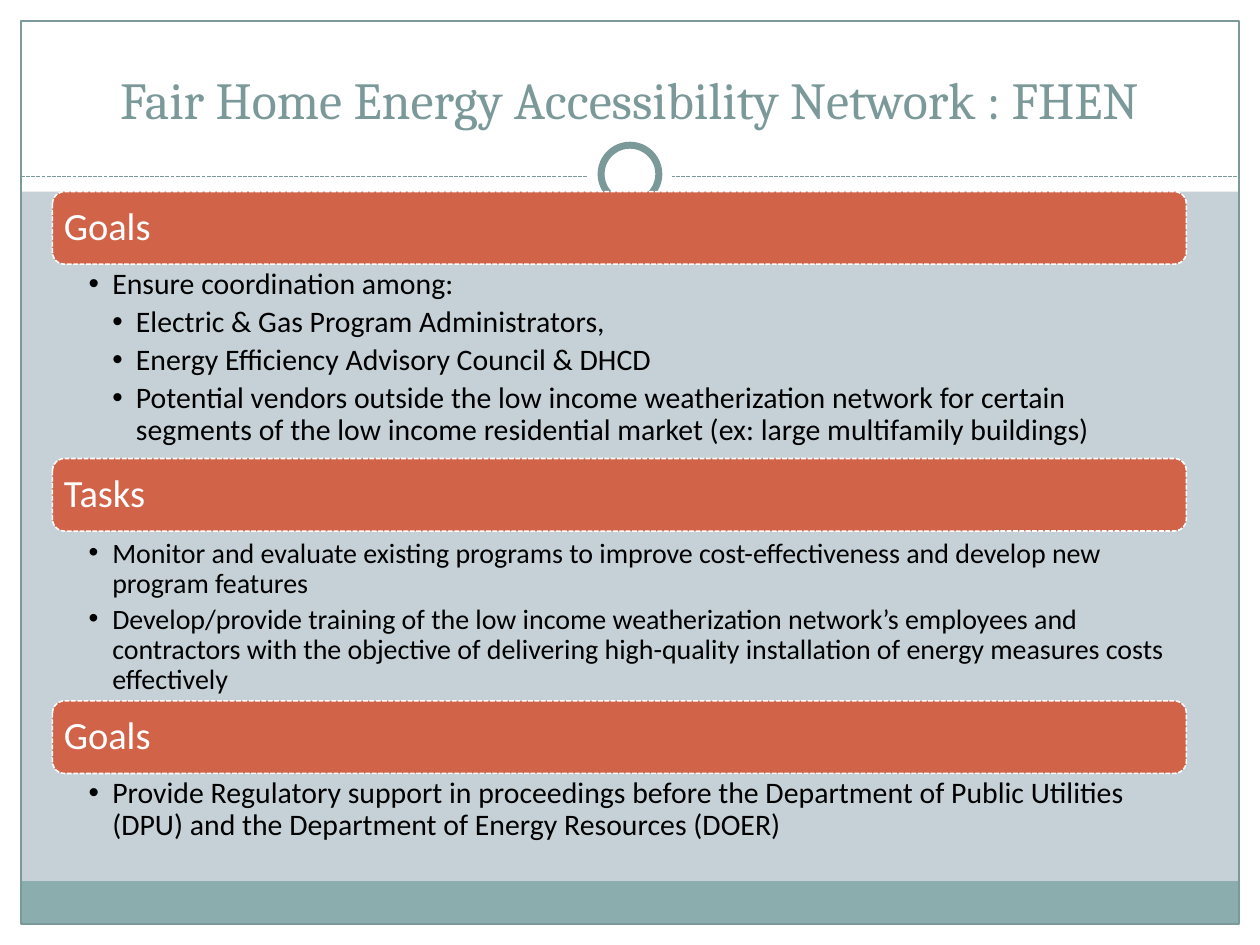
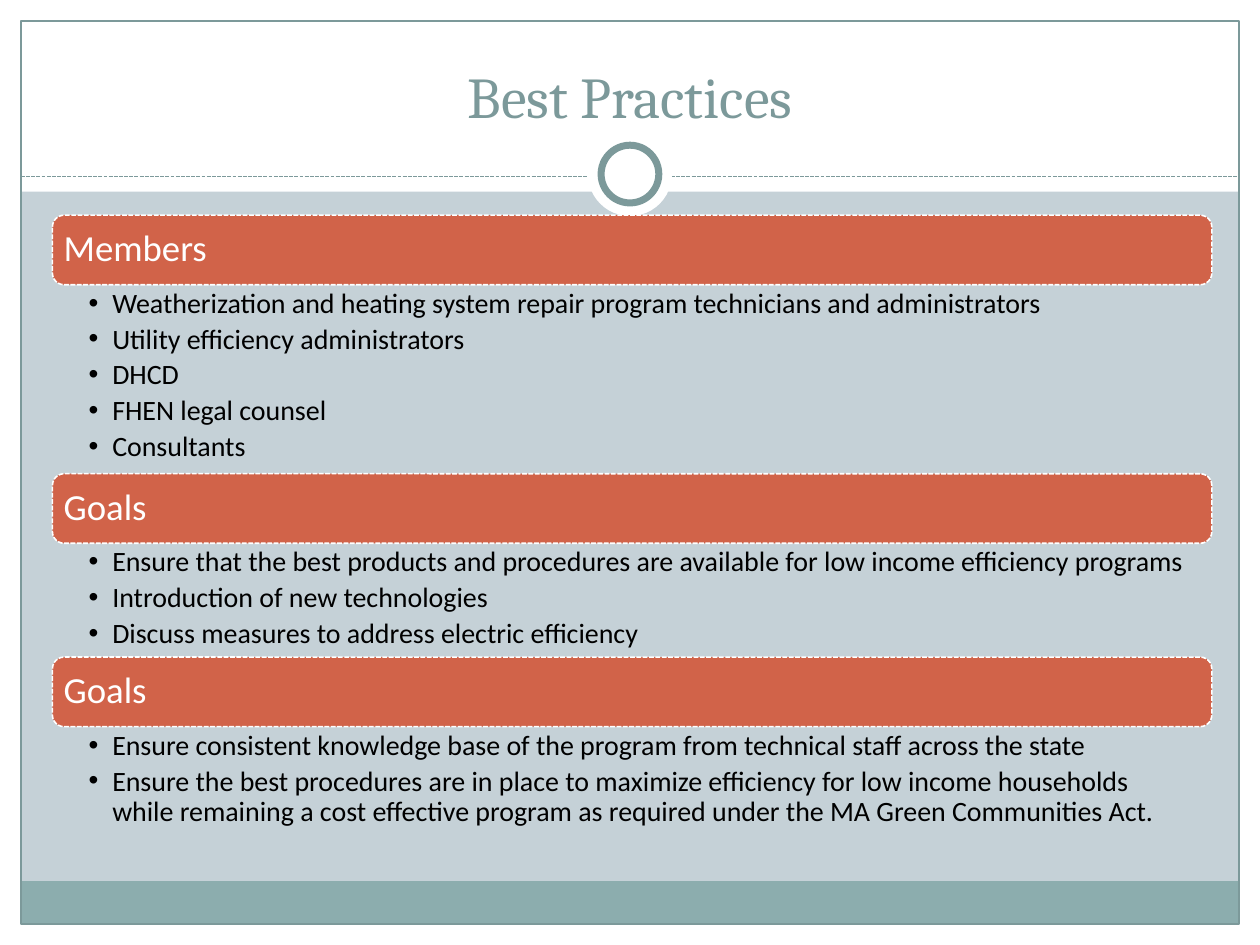
from dataclasses import dataclass
from lxml.etree import SubElement
from pptx import Presentation
from pptx.dml.color import RGBColor
from pptx.enum.dml import MSO_LINE
from pptx.enum.shapes import MSO_CONNECTOR, MSO_SHAPE
from pptx.enum.text import MSO_ANCHOR, MSO_AUTO_SIZE, PP_ALIGN
from pptx.oxml.ns import qn
from pptx.util import Pt

WIDTH, HEIGHT = 720, 540
MARGIN = 12
HEADER_HEIGHT = 109.5
RULE_TOP = 101
FOOTER_TOP, FOOTER_HEIGHT = 503.5, 24.5
SECTION_LEFT = 30
INDENT = 13.5
TITLE_ONLY = 5


def color(value):
    return RGBColor.from_string(value)


@dataclass
class Section:
    heading: str
    items: list
    list_height: float
    size: float
    insets: tuple


class Deck:
    white = "FFFFFF"
    black = "000000"
    backdrop = "C5D1D7"
    footer = "8CADAE"
    accent = "7C999A"
    heading = "D16349"
    title_font = "Cambria"
    body_font = "Calibri"

    def __init__(self):
        self.presentation = Presentation()
        self.presentation.slide_width = Pt(WIDTH)
        self.presentation.slide_height = Pt(HEIGHT)
        self.page = None

    def add_page(self, title, size):
        layout = self.presentation.slide_layouts[TITLE_ONLY]
        self.page = self.presentation.slides.add_slide(layout)
        fill = self.page.background.fill
        fill.solid()
        fill.fore_color.rgb = color(self.backdrop)
        self.frame()
        self.title(title, size)

    def frame(self):
        inner_width, inner_height = WIDTH - 2 * MARGIN, HEIGHT - 2 * MARGIN
        bands = [
            (0, HEIGHT - MARGIN, WIDTH, MARGIN, self.white),
            (0, 0, WIDTH, HEADER_HEIGHT, self.white),
            (0, 0, MARGIN, HEIGHT, self.white),
            (WIDTH - MARGIN, 0, MARGIN, HEIGHT, self.white),
            (MARGIN, FOOTER_TOP, inner_width, FOOTER_HEIGHT, self.footer),
        ]
        for left, top, width, height, fill in bands:
            self.shape(MSO_SHAPE.RECTANGLE, left, top, width, height, fill)
        self.shape(MSO_SHAPE.RECTANGLE, MARGIN, MARGIN, inner_width, inner_height,
                   line=self.accent, weight=0.75)
        self.rule(MARGIN, WIDTH - MARGIN, RULE_TOP)
        self.circle(48)
        self.circle(33, line=self.accent, weight=4)

    def circle(self, diameter, **outline):
        self.shape(MSO_SHAPE.OVAL, (WIDTH - diameter) / 2, 99.5 - diameter / 2,
                   diameter, diameter, self.white, **outline)

    def shape(self, kind, left, top, width, height, fill=None, line=None, weight=0, dash=None):
        shape = self.page.shapes.add_shape(kind, Pt(left), Pt(top), Pt(width), Pt(height))
        shape.shadow.inherit = False
        if fill:
            shape.fill.solid()
            shape.fill.fore_color.rgb = color(fill)
        else:
            shape.fill.background()
        if line:
            shape.line.color.rgb = color(line)
            shape.line.width = Pt(weight)
            shape.line.dash_style = dash
        else:
            shape.line.fill.background()
        return shape

    def rule(self, left, right, top):
        rule = self.page.shapes.add_connector(
            MSO_CONNECTOR.STRAIGHT, Pt(left), Pt(top), Pt(right), Pt(top))
        rule.line.color.rgb = color(self.accent)
        rule.line.width = Pt(0.75)
        rule.line.dash_style = MSO_LINE.SQUARE_DOT
        SubElement(rule.element.spPr, qn("a:effectLst"))

    def title(self, text, size):
        box = self.page.shapes.title
        box.left, box.top, box.width, box.height = Pt(24), Pt(18), Pt(672), Pt(60)
        box.element.getparent().append(box.element)
        box.text_frame.auto_size = MSO_AUTO_SIZE.NONE
        box.text_frame.vertical_anchor = MSO_ANCHOR.BOTTOM
        para = box.text_frame.paragraphs[0]
        para.alignment = PP_ALIGN.CENTER
        self.span(para, text, self.title_font, size, self.accent)

    def span(self, para, text, font, size, fill):
        span = para.add_run()
        span.text = text
        span.font.name = font
        span.font.size = Pt(size)
        span.font.color.rgb = color(fill)

    def insets(self, frame, left, top, right, bottom):
        frame.margin_left, frame.margin_top = Pt(left), Pt(top)
        frame.margin_right, frame.margin_bottom = Pt(right), Pt(bottom)
        frame.word_wrap = True

    def heading_bar(self, text, top, width, height, size):
        bar = self.shape(MSO_SHAPE.ROUNDED_RECTANGLE, SECTION_LEFT, top, width, height,
                         self.heading, self.white, 0.9, MSO_LINE.SQUARE_DOT)
        self.insets(bar.text_frame, 4.5, 4.5, 4.5, 4.5)
        bar.text_frame.vertical_anchor = MSO_ANCHOR.MIDDLE
        para = bar.text_frame.paragraphs[0]
        para.alignment = PP_ALIGN.LEFT
        para.line_spacing = 0.9
        self.span(para, text, self.body_font, size, self.white)

    def bullet_list(self, section, top, width):
        box = self.page.shapes.add_textbox(
            Pt(SECTION_LEFT), Pt(top), Pt(width), Pt(section.list_height))
        frame = box.text_frame
        self.insets(frame, *section.insets)
        for index, (level, text) in enumerate(section.items):
            para = frame.add_paragraph() if index else frame.paragraphs[0]
            para.level = level
            para.line_spacing = 0.9
            para.space_after = Pt(section.size * 0.2)
            self.bullet(para, level)
            self.span(para, text, self.body_font, section.size, self.black)

    def bullet(self, para, level):
        properties = para._p.get_or_add_pPr()
        properties.set("marL", str(Pt(INDENT * level)))
        properties.set("indent", str(Pt(-INDENT)))
        SubElement(properties, qn("a:buFont"), typeface="Arial")
        SubElement(properties, qn("a:buChar"), char="•")

    def sections(self, sections, top, width, bar_height, heading_size):
        for section in sections:
            self.heading_bar(section.heading, top, width, bar_height, heading_size)
            self.bullet_list(section, top + bar_height, width)
            top += bar_height + section.list_height

    def save(self):
        self.presentation.save("out.pptx")


def main():
    deck = Deck()
    insets = (20.7, 2.5, 12, 2.5)

    deck.add_page("Fair Home Energy Accessibility Network : FHEN", 29.7)
    deck.sections([
        Section("Goals", [
            (1, "Ensure coordination among:"),
            (2, "Electric & Gas Program Administrators,"),
            (2, "Energy Efficiency Advisory Council & DHCD"),
            (2, "Potential vendors outside the low income weatherization network for certain "
                "segments of the low income residential market (ex: large multifamily buildings)"),
        ], 111, 17, insets),
        Section("Tasks", [
            (1, "Monitor and evaluate existing programs to improve cost-effectiveness and "
                "develop new program features"),
            (1, "Develop/provide training of the low income weatherization network’s employees "
                "and contractors with the objective of delivering high-quality installation "
                "of energy measures costs effectively"),
        ], 97, 16, (20.7, 4.5, 1.5, 0)),
        Section("Goals", [
            (1, "Provide Regulatory support in proceedings before the Department of Public "
                "Utilities (DPU) and the Department of Energy Resources (DOER)"),
        ], 42.5, 17, insets),
    ], top=HEADER_HEIGHT, width=648, bar_height=41.5, heading_size=22)

    deck.add_page("Best Practices", 33)
    deck.sections([
        Section("Members", [
            (1, "Weatherization and heating system repair program technicians and administrators"),
            (1, "Utility efficiency administrators"),
            (1, "DHCD"),
            (1, "FHEN legal counsel"),
            (1, "Consultants"),
        ], 108, 16, insets),
        Section("Goals", [
            (1, "Ensure that the best products and procedures are available for low income "
                "efficiency programs"),
            (1, "Introduction of new technologies"),
            (1, "Discuss measures to address electric efficiency"),
        ], 65, 16, insets),
        Section("Goals", [
            (1, "Ensure consistent knowledge base of the program from technical staff across "
                "the state"),
            (1, "Ensure the best procedures are in place to maximize efficiency for low income "
                "households while remaining a cost effective program as required under the "
                "MA Green Communities Act."),
        ], 62, 16, insets),
    ], top=123, width=662.5, bar_height=39.75, heading_size=21)

    deck.save()


if __name__ == "__main__":
    main()
